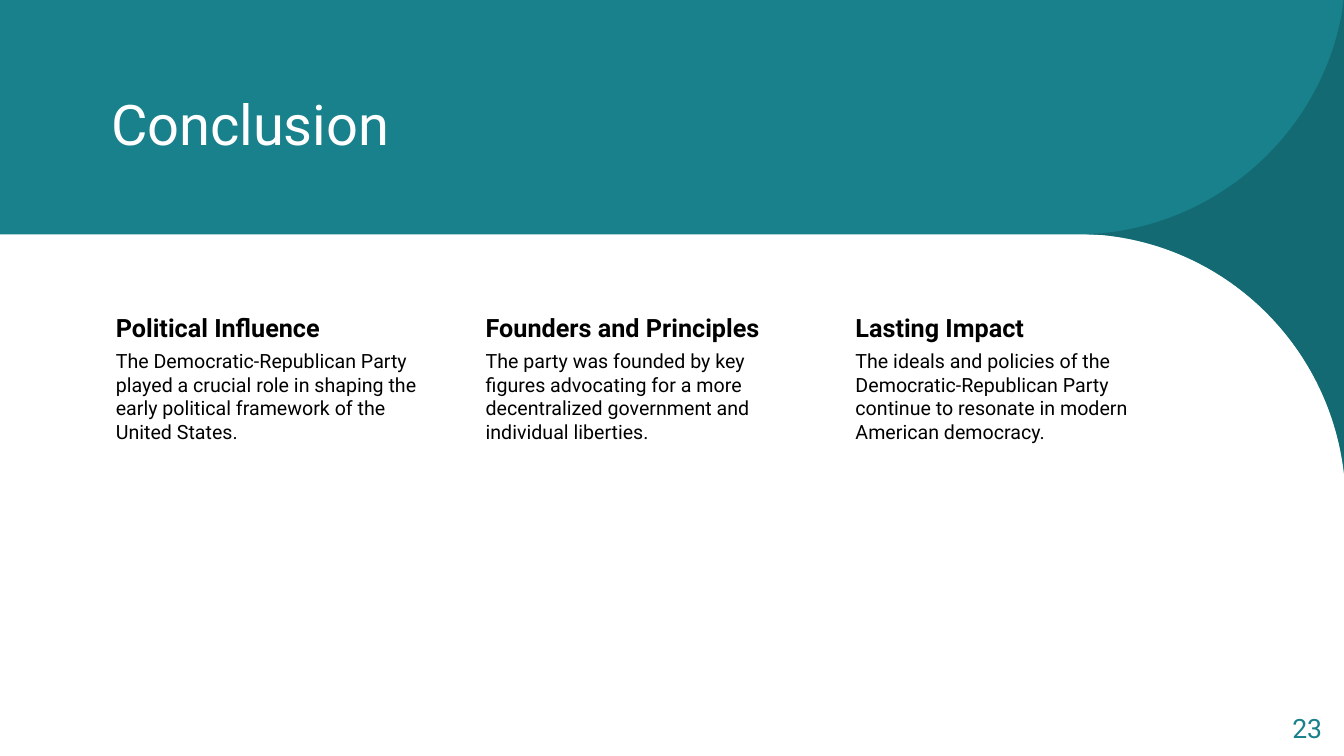
from typing import NamedTuple

from lxml import etree
from pptx import Presentation
from pptx.dml.color import RGBColor
from pptx.enum.shapes import MSO_SHAPE
from pptx.enum.text import MSO_ANCHOR, PP_ALIGN
from pptx.oxml.ns import qn
from pptx.util import Cm, Pt

RECTANGLE = MSO_SHAPE.RECTANGLE
TOP, MIDDLE = MSO_ANCHOR.TOP, MSO_ANCHOR.MIDDLE
LEFT, RIGHT = PP_ALIGN.LEFT, PP_ALIGN.RIGHT

TEAL = RGBColor(0x18, 0x81, 0x8C)
DARK_TEAL = RGBColor(0x12, 0x61, 0x69)
WHITE = RGBColor(0xFF, 0xFF, 0xFF)
BLACK = RGBColor(0x00, 0x00, 0x00)

SLIDE_W, SLIDE_H = 33.87, 19.05
BANNER_H = 5.91
COLUMN_LEFT, COLUMN_PITCH, COLUMN_W = 2.54, 9.32, 8.47

# A segment of one point is a line; three points make a Bezier curve.
Segment = tuple[tuple[float, float], ...]


class Outline(NamedTuple):
    start: tuple[float, float]
    segments: list[Segment]


class Box(NamedTuple):
    left: float
    top: float
    width: float
    height: float


class Insets(NamedTuple):
    left: float = 0.25
    top: float = 0.13
    right: float = 0.25
    bottom: float = 0.13


class Column(NamedTuple):
    heading: str
    body: str


CORNER = Outline((33.88, 10.36), [
    ((33.88, 19.05),),
    ((24.56, 19.05),),
    ((29.41, 19.05), (33.4, 15.29), (33.86, 10.49)),
])
SWOOSH = Outline((33.9, 0), [
    ((33.86, 0),),
    ((33.81, 0.38),),
    ((33.25, 3.33), (30.78, 5.59), (27.76, 5.88)),
    ((27.38, 5.9),),
    ((27.76, 5.92),),
    ((30.99, 6.22), (33.55, 8.79), (33.88, 12.01)),
    ((33.9, 12.19),),
])

COLUMNS = [
    Column("Political Influence",
           "The Democratic-Republican Party played a crucial role in shaping "
           "the early political framework of the United States."),
    Column("Founders and Principles",
           "The party was founded by key figures advocating for a more "
           "decentralized government and individual liberties."),
    Column("Lasting Impact",
           "The ideals and policies of the Democratic-Republican Party "
           "continue to resonate in modern American democracy."),
]

HEADING_FONT = {"size": Pt(18), "bold": True}
BODY_FONT = {"size": Pt(14)}
HEADING_INSETS = Insets(0.38, 0.08, 0.08, 0.08)
BODY_INSETS = Insets(0.38, 0.05, 0.05, 0.05)


def paint(sp, color: RGBColor, opacity: int = 100) -> None:
    sp.shadow.inherit = False
    sp.line.fill.background()
    sp.fill.solid()
    sp.fill.fore_color.rgb = color
    if opacity < 100:
        clr = sp._element.spPr.find(qn("a:solidFill"))[0]
        etree.SubElement(clr, qn("a:alpha"), val=str(opacity * 1000))


def add_panel(s, height: float, color: RGBColor) -> None:
    paint(s.shapes.add_shape(RECTANGLE, 0, 0, Cm(SLIDE_W), Cm(height)), color)


def add_outline(s, outline: Outline, color: RGBColor, opacity: int = 100) -> None:
    """Draw a freeform, joining each run of three points into one curve."""
    fb = s.shapes.build_freeform(*map(Cm, outline.start))
    fb.add_line_segments([(Cm(x), Cm(y)) for seg in outline.segments for x, y in seg])
    sp = fb.convert_to_shape()
    steps = iter(list(sp._element.iter(qn("a:lnTo"))))
    for segment in outline.segments:
        first, *others = [next(steps) for _ in segment]
        if others:
            bezier = etree.Element(qn("a:cubicBezTo"))
            first.addprevious(bezier)
            for step in (first, *others):
                bezier.append(step[0])
                step.getparent().remove(step)
    paint(sp, color, opacity)


def add_text(s, box: Box, text: str, font: dict, color: RGBColor = BLACK,
             insets: Insets = Insets(), anchor=TOP, paragraph: dict | None = None) -> None:
    tf = s.shapes.add_textbox(*map(Cm, box)).text_frame
    tf.word_wrap = True
    tf.vertical_anchor = anchor
    for side, inset in insets._asdict().items():
        setattr(tf, f"margin_{side}", Cm(inset))
    p = tf.paragraphs[0]
    for name, value in (paragraph or {"alignment": LEFT}).items():
        setattr(p, name, value)
    r = p.add_run()
    r.text = text
    for name, value in {"name": "Roboto", **font}.items():
        setattr(r.font, name, value)
    r.font.color.rgb = color


def main() -> None:
    prs = Presentation()
    prs.slide_width, prs.slide_height = Cm(SLIDE_W), Cm(SLIDE_H)
    s = prs.slides.add_slide(prs.slide_layouts[6])

    add_outline(s, CORNER, TEAL, 80)
    add_panel(s, SLIDE_H, WHITE)
    add_panel(s, BANNER_H, TEAL)
    add_outline(s, SWOOSH, TEAL)
    add_outline(s, SWOOSH, DARK_TEAL, 70)

    add_text(s, Box(2.55, 1.2, 27.53, 3.81), "Conclusion", {"size": Pt(40)},
             WHITE, anchor=MIDDLE)
    for i, column in enumerate(COLUMNS):
        left = COLUMN_LEFT + i * COLUMN_PITCH
        add_text(s, Box(left, 7.79, COLUMN_W, 0.95), column.heading,
                 HEADING_FONT, insets=HEADING_INSETS)
        add_text(s, Box(left, 8.75, COLUMN_W, 8.41), column.body,
                 BODY_FONT, insets=BODY_INSETS)
    add_text(s, Box(31.64, 17.88, 1.93, 1.02), "23", {"size": Pt(19)}, TEAL,
             anchor=MIDDLE,
             paragraph={"alignment": RIGHT, "line_spacing": 0.9, "space_after": Pt(6)})

    prs.save("out.pptx")


if __name__ == "__main__":
    main()
